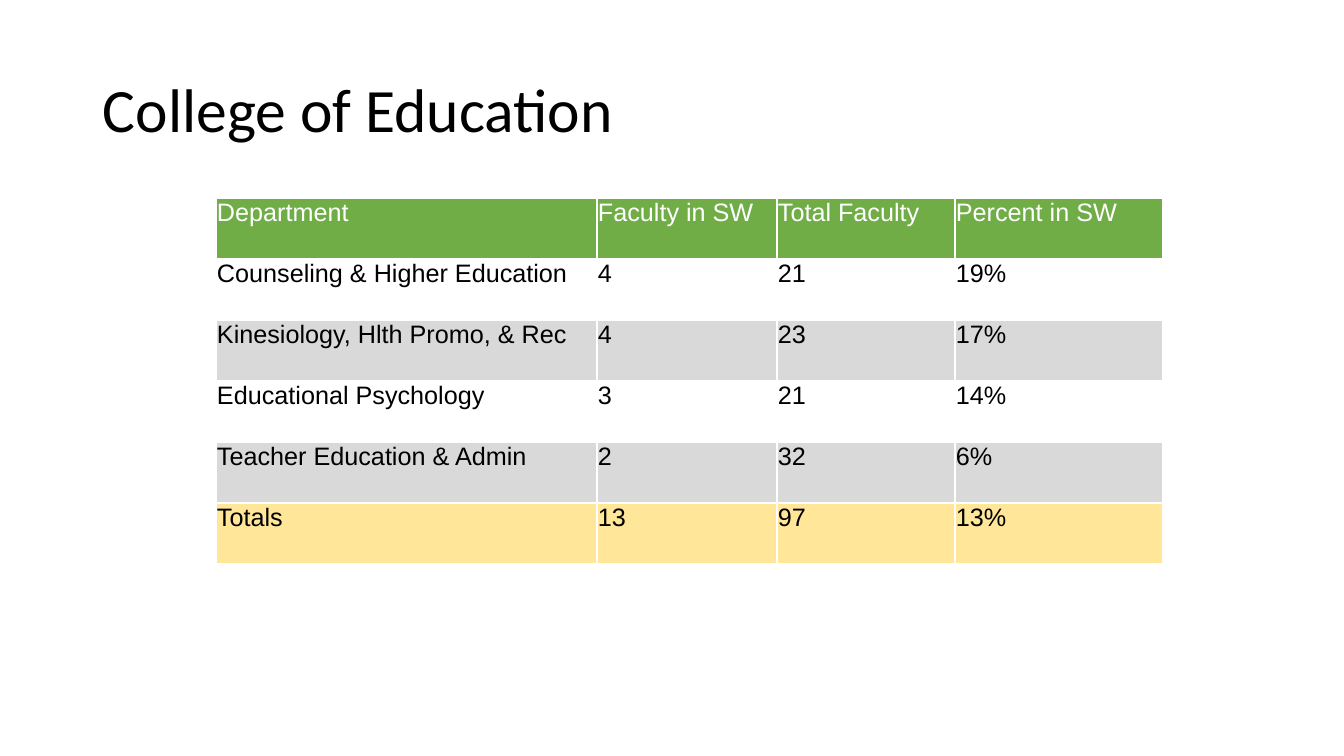
import pptx
import pptx.dml.color
import pptx.enum.text
import pptx.oxml.ns
import pptx.util
from lxml import etree

RGBColor = pptx.dml.color.RGBColor
BLACK = RGBColor(0x00, 0x00, 0x00)
WHITE = RGBColor(0xFF, 0xFF, 0xFF)
GREEN = RGBColor(0x70, 0xAD, 0x47)
GRAY = RGBColor(0xD9, 0xD9, 0xD9)
YELLOW = RGBColor(0xFF, 0xE6, 0x99)

EMU_PER_PX = 914400 / 100.8


def px(length):
    return pptx.util.Emu(round(length * EMU_PER_PX))


def add_borders(cell, color, width):
    """Draw a solid line on all four sides; call before the cell is filled."""
    properties = cell._tc.get_or_add_tcPr()
    for side in ("a:lnL", "a:lnR", "a:lnT", "a:lnB"):
        line = etree.SubElement(properties, pptx.oxml.ns.qn(side), w=str(width))
        fill = etree.SubElement(line, pptx.oxml.ns.qn("a:solidFill"))
        etree.SubElement(fill, pptx.oxml.ns.qn("a:srgbClr"), val=str(color))


presentation = pptx.Presentation()
presentation.slide_width = px(1344)
presentation.slide_height = px(756)
slide = presentation.slides.add_slide(presentation.slide_layouts[6])

# Title
title = slide.shapes.add_textbox(px(93), px(40), px(1159), px(146))
title.text_frame.word_wrap = True
title.text_frame.vertical_anchor = pptx.enum.text.MSO_ANCHOR.MIDDLE
paragraph = title.text_frame.paragraphs[0]
paragraph.text = "College of Education"
paragraph.line_spacing = 0.9
paragraph.font.name = "Calibri"
paragraph.font.size = pptx.util.Pt(44)
paragraph.font.color.rgb = BLACK

# Faculty table: row fill, then the cell texts
ROWS = [
    (GREEN, ["Department", "Faculty in SW", "Total Faculty", "Percent in SW"]),
    (None, ["Counseling & Higher Education", "4", "21", "19%"]),
    (GRAY, ["Kinesiology, Hlth Promo, & Rec", "4", "23", "17%"]),
    (None, ["Educational Psychology", "3", "21", "14%"]),
    (GRAY, ["Teacher Education & Admin", "2", "32", "6%"]),
    (YELLOW, ["Totals", "13", "97", "13%"]),
]
COLUMN_WIDTHS = [381, 180, 178, 208]
ROW_HEIGHT = 61

table = slide.shapes.add_table(
    len(ROWS), len(COLUMN_WIDTHS), px(216), px(198),
    px(sum(COLUMN_WIDTHS)), px(ROW_HEIGHT * len(ROWS)),
).table
table.first_row = False
table.horz_banding = False
for column, width in zip(table.columns, COLUMN_WIDTHS):
    column.width = px(width)

for row, (row_fill, texts) in zip(table.rows, ROWS):
    row.height = px(ROW_HEIGHT)
    for cell, text in zip(row.cells, texts):
        add_borders(cell, WHITE, pptx.util.Pt(1))
        if row_fill is None:
            cell.fill.background()
        else:
            cell.fill.solid()
            cell.fill.fore_color.rgb = row_fill
        cell.margin_left = cell.margin_right = cell.margin_top = px(1)
        cell.margin_bottom = 0
        paragraph = cell.text_frame.paragraphs[0]
        paragraph.text = text
        paragraph.font.name = "Arial"
        paragraph.font.size = pptx.util.Pt(18)
        paragraph.font.color.rgb = WHITE if row_fill == GREEN else BLACK

presentation.save("out.pptx")
